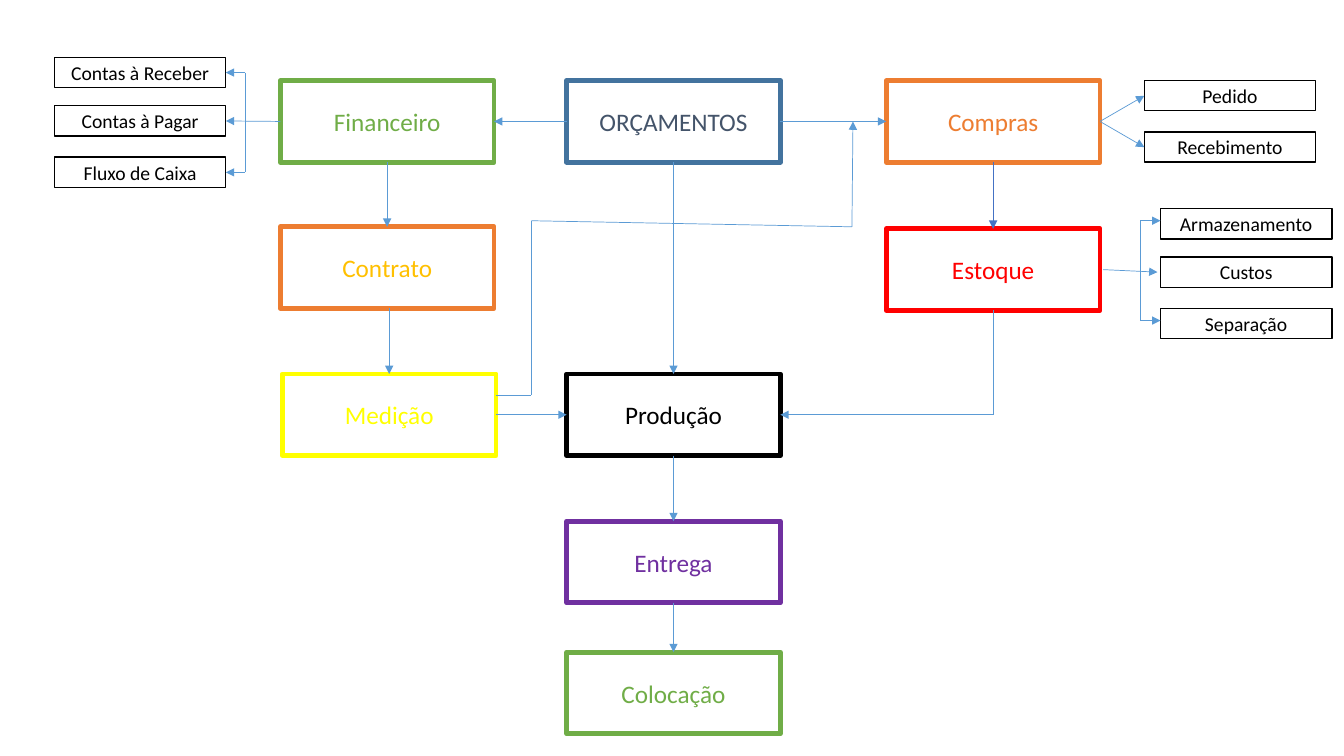
from collections import namedtuple
from itertools import pairwise

from lxml import etree
from pptx import Presentation
from pptx.dml.color import RGBColor
from pptx.enum.shapes import MSO_CONNECTOR as CONN, MSO_SHAPE as SHAPE
from pptx.enum.text import MSO_ANCHOR as ANCHOR, PP_ALIGN as ALIGN
from pptx.oxml.ns import qn
from pptx.util import Inches, Pt

BLUE, BLACK = "5B9BD5", "000000"
STEP_W, STEP_H = 2.12, 0.81
ITEM_W, ITEM_H = 1.7, 0.3
ITEM_OFFSETS = (0, 0.48, 0.99)
COLS = {"left": 2.78, "measure": 2.8, "mid": 5.62, "right": 8.79}
ROWS = {"top": 0.8, "contract": 2.25, "stock": 2.27,
        "production": 3.71, "delivery": 5.17, "install": 6.47}

# label: column, row, border colour, text colour
STEPS = {
    "ORÇAMENTOS": ("mid", "top", "43739E", "44546A"),
    "Financeiro": ("left", "top", "70AD47", "70AD47"),
    "Compras": ("right", "top", "ED7D31", "ED7D31"),
    "Contrato": ("left", "contract", "ED7D31", "FFC000"),
    "Estoque": ("right", "stock", "FF0000", "FF0000"),
    "Medição": ("measure", "production", "FFFF00", "FFFF00"),
    "Produção": ("mid", "production", BLACK, BLACK),
    "Entrega": ("mid", "delivery", "7030A0", "7030A0"),
    "Colocação": ("mid", "install", "70AD47", "70AD47"),
}


class Box(namedtuple("Box", "x y w h")):
    @property
    def right(self):
        return self.x + self.w

    @property
    def bottom(self):
        return self.y + self.h

    @property
    def cx(self):
        return self.x + self.w / 2

    @property
    def cy(self):
        return self.y + self.h / 2


def rgb(value):
    return RGBColor.from_string(value)


def add_box(s, box, text, size, width, border, color):
    sp = s.shapes.add_shape(SHAPE.RECTANGLE, *map(Inches, box))
    sp.shadow.inherit = False
    sp.fill.background()
    sp.line.color.rgb = rgb(border)
    sp.line.width = Pt(width)
    tf = sp.text_frame
    tf.word_wrap = True
    tf.vertical_anchor = ANCHOR.MIDDLE
    p = tf.paragraphs[0]
    p.alignment = ALIGN.CENTER
    r = p.add_run()
    r.text = text
    for name, value in {"name": "Calibri", "size": Pt(size)}.items():
        setattr(r.font, name, value)
    r.font.color.rgb = rgb(color)
    return box


def add_route(s, *points, color=BLUE, arrow=True):
    """Join the points with straight lines, with an arrowhead at the last."""
    for start, end in pairwise(points):
        line = s.shapes.add_connector(
            CONN.STRAIGHT, *map(Inches, (*start, *end)))
        line.line.color.rgb = rgb(color)
        line.line.width = Pt(0.5)
        etree.SubElement(line._element.spPr, qn("a:effectLst"))
    if arrow:
        ln = line.line._get_or_add_ln()
        etree.SubElement(ln, qn("a:tailEnd"), type="triangle")


def add_items(s, x, y, labels, offsets=ITEM_OFFSETS):
    return [add_box(s, Box(x, y + dy, ITEM_W, ITEM_H), text, 14, 1, BLACK, BLACK)
            for text, dy in zip(labels, offsets)]


def add_steps(s):
    return {text: add_box(s, Box(COLS[col], ROWS[row], STEP_W, STEP_H),
                          text, 18, 3.5, border, color)
            for text, (col, row, border, color) in STEPS.items()}


def add_finance_items(s, step):
    items = add_items(s, step.x - 2.24, step.y - 0.23,
                      ("Contas à Receber", "Contas à Pagar", "Fluxo de Caixa"))
    first, middle, last = items
    spine = first.right + 0.19
    add_route(s, (spine, first.cy), (spine, last.cy), arrow=False)
    for item in (first, last):
        add_route(s, (spine, item.cy), (item.right, item.cy))
    add_route(s, (step.x, step.cy), (middle.right, middle.cy))


def add_purchase_items(s, step):
    for item in add_items(s, step.right + 0.44, step.y,
                          ("Pedido", "Recebimento"), (0, 0.51)):
        add_route(s, (step.right, step.cy), (item.x, item.cy))


def add_stock_items(s, step):
    first, middle, last = add_items(s, step.right + 0.6, step.y - 0.2,
                                    ("Armazenamento", "Custos", "Separação"))
    spine = first.x - 0.2
    ends = [item.cy - 0.03 for item in (first, last)]
    add_route(s, *((spine, y) for y in ends), arrow=False)
    for y in ends:
        add_route(s, (spine, y), (first.x, y))
    add_route(s, (step.right + 0.03, step.cy), (middle.x - 0.03, middle.cy))


def add_flow(s, steps):
    budget, finance, buying, contract, stock, measure, production = (
        list(steps.values())[:7])
    for upper, lower, color in (
            ("Financeiro", "Contrato", BLUE), ("Contrato", "Medição", BLUE),
            ("ORÇAMENTOS", "Produção", BLUE), ("Compras", "Estoque", "4472C4"),
            ("Produção", "Entrega", BLUE), ("Entrega", "Colocação", BLUE)):
        a, b = steps[upper], steps[lower]
        x = b.cx
        add_route(s, (x, a.bottom), (x, b.y), color=color)
    add_route(s, (budget.x, budget.cy), (finance.right, finance.cy))
    add_route(s, (budget.right, budget.cy), (buying.x, buying.cy))
    add_route(s, (measure.right, measure.cy), (production.x, production.cy))
    add_route(s, (stock.cx, stock.bottom), (stock.cx, production.cy),
              (production.right, production.cy))
    bend, rise = measure.right + 0.35, buying.x - 0.34
    exit_y = measure.y + 0.21
    add_route(s, (measure.right, exit_y), (bend, exit_y),
              (bend, contract.y - 0.06), (rise, contract.y),
              (rise + 0.01, buying.cy))


def main():
    prs = Presentation()
    prs.slide_width, prs.slide_height = Inches(13.33), Inches(7.5)
    s = prs.slides.add_slide(prs.slide_layouts[6])
    steps = add_steps(s)
    add_finance_items(s, steps["Financeiro"])
    add_purchase_items(s, steps["Compras"])
    add_stock_items(s, steps["Estoque"])
    add_flow(s, steps)
    prs.save("out.pptx")


if __name__ == "__main__":
    main()
